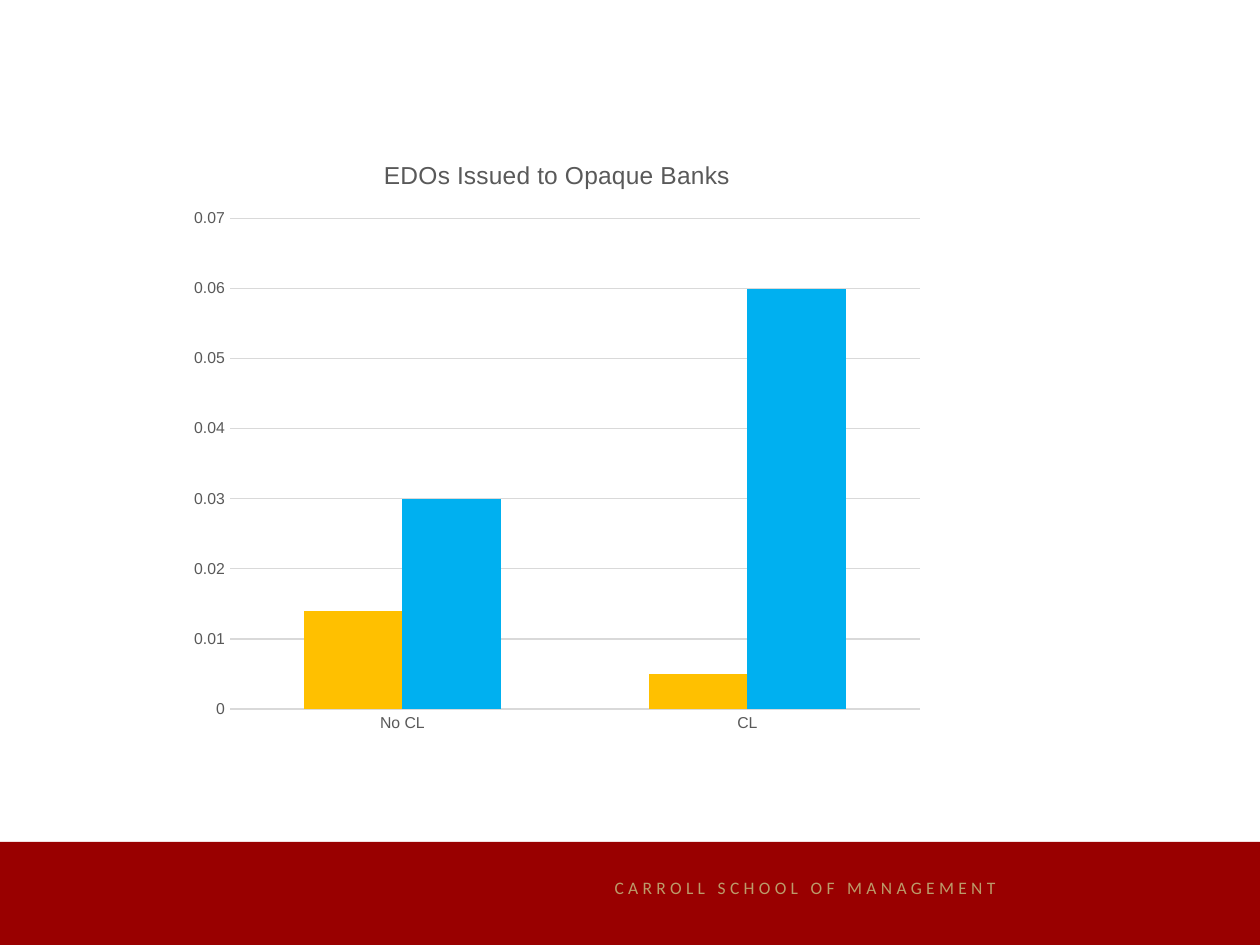
import pptx
import pptx.chart.data
import pptx.dml.color
import pptx.enum.chart
import pptx.enum.shapes
import pptx.util

Cm, Pt = pptx.util.Cm, pptx.util.Pt
COLORS = {"maroon": "990000", "gold": "BC9B6A", "grid": "D9D9D9",
          "text": "595959", "yellow": "FFC000", "blue": "00B0F0"}


def rgb(name):
    return pptx.dml.color.RGBColor.from_string(COLORS[name])


def write(tf, text, size=10, font="Arial", color="text", spacing=None):
    r = tf.paragraphs[0].add_run()
    r.text = text
    r.font.size = Pt(size)
    r.font.name = font
    r.font.bold = False
    r.font.color.rgb = rgb(color)
    if spacing:
        r.font._element.set("spc", str(int(spacing * 100)))


prs = pptx.Presentation()
prs.slide_width, prs.slide_height = Cm(25.4), Cm(19.05)
s = prs.slides.add_slide(prs.slide_layouts[6])

# Footer band
sp = s.shapes.add_shape(pptx.enum.shapes.MSO_SHAPE.RECTANGLE,
                        Cm(0), Cm(16.97), Cm(25.4), Cm(2.13))
sp.shadow.inherit = False
sp.fill.solid()
sp.fill.fore_color.rgb = rgb("maroon")
sp.line.fill.background()

# Footer text
sp = s.shapes.add_textbox(Cm(12.14), Cm(17.55), Cm(8.97), Cm(0.69))
sp.text_frame.word_wrap = False
write(sp.text_frame, "CARROLL SCHOOL OF MANAGEMENT",
      font="Calibri", color="gold", spacing=2.5)

# Chart
data = pptx.chart.data.CategoryChartData()
data.categories = ["No CL", "CL"]
data.add_series("Series 1", [0.014, 0.005])
data.add_series("Series 2", [0.03, 0.06])
chart = s.shapes.add_chart(
    pptx.enum.chart.XL_CHART_TYPE.COLUMN_CLUSTERED,
    Cm(3.61), Cm(2.74), Cm(15.24), Cm(12.27), data).chart
chart.has_legend = False
chart.font.size = Pt(10)
chart.font.name = "Arial"
chart.has_title = True
write(chart.chart_title.text_frame, "EDOs Issued to Opaque Banks", size=14)
chart.chart_title.include_in_layout = False

# Columns
plot = chart.plots[0]
plot.gap_width = 150
plot.overlap = 0
plot.vary_by_categories = False
for series, color in zip(plot.series, ["yellow", "blue"]):
    series.format.fill.solid()
    series.format.fill.fore_color.rgb = rgb(color)

# Axes
for axis in (chart.category_axis, chart.value_axis):
    axis.major_tick_mark = pptx.enum.chart.XL_TICK_MARK.NONE
    axis.minor_tick_mark = pptx.enum.chart.XL_TICK_MARK.NONE
    axis.tick_labels.font.size = Pt(9)
    axis.tick_labels.font.name = "Arial"
    axis.tick_labels.font.color.rgb = rgb("text")
    axis.format.line.fill.background()
axis = chart.value_axis
axis.minimum_scale, axis.maximum_scale, axis.major_unit = 0, 0.07, 0.01
axis.has_major_gridlines = True
axis.major_gridlines.format.line.color.rgb = rgb("grid")
axis.major_gridlines.format.line.width = Pt(0.75)

prs.save("out.pptx")
